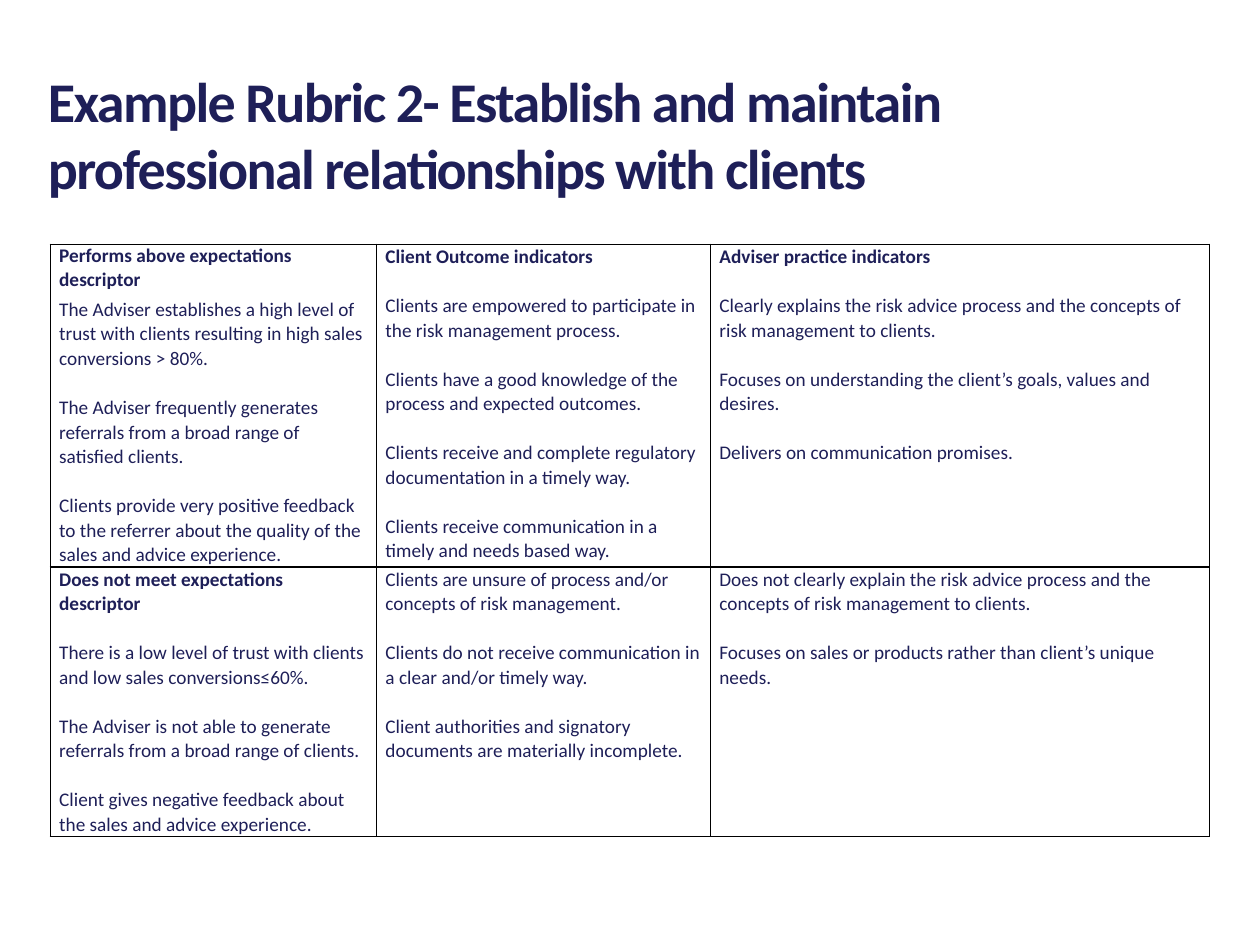
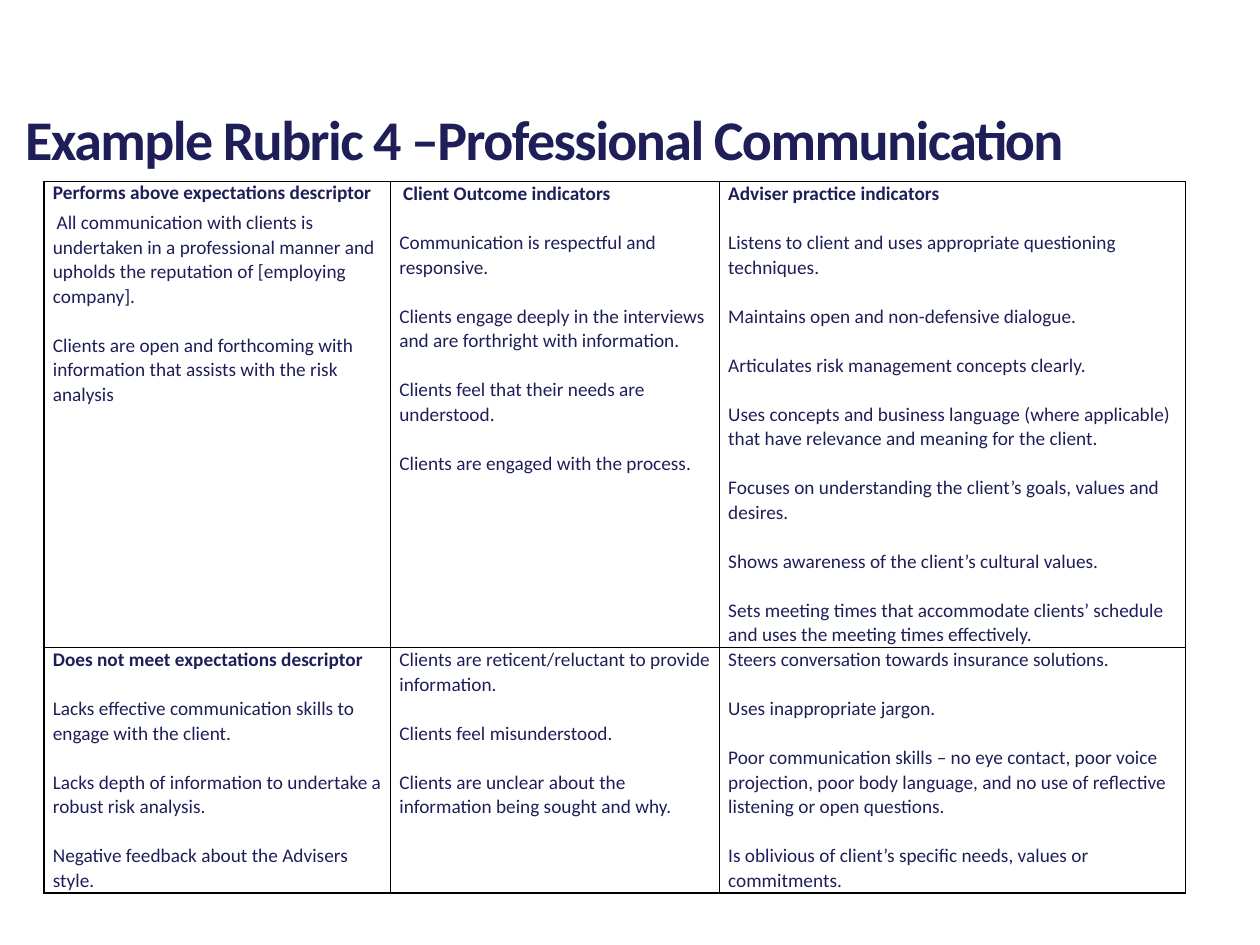
"""Build two slides that each show a rubric table."""
from dataclasses import dataclass

from lxml.etree import SubElement as Sub
from pptx import Presentation
from pptx.dml.color import RGBColor as Rgb
from pptx.enum.text import MSO_ANCHOR as Anchor, MSO_AUTO_SIZE as Auto, PP_ALIGN as Align
from pptx.oxml.ns import qn
from pptx.util import Inches, Pt

ABOVE = "Performs above expectations descriptor"
BELOW = "Does not meet expectations descriptor"
CLIENT = "Client Outcome indicators"
ADVISER = "Adviser practice indicators"

RUBRICS = [
    {
        "title": "Example Rubric 2- Establish and maintain professional relationships with clients",
        "head": (0.38, 0.72),
        "place": (0.4, 1.94),
        "cols": (2.59, 2.65, 3.96),
        "rows": (2.56, 2.14),
        "nudge": (),
        "cells": [
            [
                [
                    ABOVE,
                    "The Adviser establishes a high level of trust with clients resulting in high sales conversions > 80%.",
                    "The Adviser frequently generates referrals from a broad range of satisfied clients.",
                    "Clients provide very positive feedback to the referrer about the quality of the sales and advice experience.",
                ],
                [
                    CLIENT,
                    "Clients are empowered to participate in the risk management process.",
                    "Clients have a good knowledge of the process and expected outcomes.",
                    "Clients receive and complete regulatory documentation in a timely way.",
                    "Clients receive communication in a timely and needs based way.",
                ],
                [
                    ADVISER,
                    "Clearly explains the risk advice process and the concepts of risk management to clients.",
                    "Focuses on understanding the client’s goals, values and desires.",
                    "Delivers on communication promises.",
                ],
            ],
            [
                [
                    BELOW,
                    "There is a low level of trust with clients and low sales conversions≤60%.",
                    "The Adviser is not able to generate referrals from a broad range of clients.",
                    "Client gives negative feedback about the sales and advice experience.",
                ],
                [
                    "Clients are unsure of process and/or concepts of risk management.",
                    "Clients do not receive communication in a clear and/or timely way.",
                    "Client authorities and signatory documents are materially incomplete.",
                ],
                [
                    "Does not clearly explain the risk advice process and the concepts of risk management to clients.",
                    "Focuses on sales or products rather than client’s unique needs.",
                ],
            ],
        ],
    },
    {
        "title": "Example Rubric 4 –Professional Communication",
        "head": (0.2, 0.76),
        "place": (0.35, 1.44),
        "cols": (2.75, 2.61, 3.7),
        "rows": (3.7, 1.94),
        "nudge": ((0, 0, 1), (0, 1, 0)),
        "cells": [
            [
                [
                    ABOVE,
                    "All communication with clients is undertaken in a professional manner and upholds the reputation of [employing company].",
                    "Clients are open and forthcoming with information that assists with the risk analysis",
                ],
                [
                    CLIENT,
                    "Communication is respectful and responsive.",
                    "Clients engage deeply in the interviews and are forthright with information.",
                    "Clients feel that their needs are understood.",
                    "Clients are engaged with the process.",
                ],
                [
                    ADVISER,
                    "Listens to client and uses appropriate questioning techniques.",
                    "Maintains open and non-defensive dialogue.",
                    "Articulates risk management concepts clearly.",
                    "Uses concepts and business language (where applicable) that have relevance and meaning for the client.",
                    "Focuses on understanding the client’s goals, values and desires.",
                    "Shows awareness of the client’s cultural values.",
                    "Sets meeting times that accommodate clients’ schedule and uses the meeting times effectively.",
                ],
            ],
            [
                [
                    BELOW,
                    "Lacks effective communication skills to engage with the client.",
                    "Lacks depth of information to undertake a robust risk analysis.",
                    "Negative feedback about the Advisers style.",
                ],
                [
                    "Clients are reticent/reluctant to provide information.",
                    "Clients feel misunderstood.",
                    "Clients are unclear about the information being sought and why.",
                ],
                [
                    "Steers conversation towards insurance solutions.",
                    "Uses inappropriate jargon.",
                    "Poor communication skills – no eye contact, poor voice projection, poor body language, and no use of reflective listening or open questions.",
                    "Is oblivious of client’s specific needs, values or commitments.",
                ],
            ],
        ],
    },
]


@dataclass(frozen=True)
class Theme:
    """Hold the shared colours, sizes and spacing."""
    ink: Rgb = Rgb.from_string("1E1F58")
    rule: str = "000000"
    face: str = "Calibri"
    title: Pt = Pt(32)
    body: Pt = Pt(11)
    line: Pt = Pt(14)
    before: Pt = Pt(3)
    after: Pt = Pt(11)
    edge: Pt = Pt(1)
    inset: Inches = Inches(0.07)
    nudge: Inches = Inches(0.03)


THEME = Theme()


def style(para, size, bold):
    """Set the font of a paragraph."""
    font = para.font
    font.name, font.size, font.bold = THEME.face, size, bold
    font.color.rgb = THEME.ink


def add_title(slide, text, spot):
    """Place and format the slide title."""
    box = slide.shapes.title
    box.left, box.top = map(Inches, spot)
    box.width, box.height = Inches(9.21), Inches(0.68)
    frame = box.text_frame
    frame.text = text
    frame.word_wrap, frame.auto_size = True, Auto.NONE
    frame.vertical_anchor = Anchor.MIDDLE
    frame.margin_left = frame.margin_right = frame.margin_top = frame.margin_bottom = 0
    para = frame.paragraphs[0]
    para.alignment = Align.LEFT
    style(para, THEME.title, True)
    para.runs[0].font._element.set("spc", "-90")


def frame_cell(cell):
    """Give a cell its borders, margins and empty fill."""
    props = cell._tc.get_or_add_tcPr()
    for side in ("lnL", "lnR", "lnT", "lnB"):
        edge = Sub(props, qn(f"a:{side}"), w=str(THEME.edge))
        Sub(Sub(edge, qn("a:solidFill")), qn("a:srgbClr"), val=THEME.rule)
    cell.fill.background()
    cell.margin_left = cell.margin_right = THEME.inset
    cell.margin_top = cell.margin_bottom = 0


def fill_cell(cell, texts, row, col, nudges):
    """Write the paragraphs of a cell."""
    frame = cell.text_frame
    for pos, text in enumerate(texts):
        para = frame.add_paragraph() if pos else frame.paragraphs[0]
        para.text = text
        if (row, col, pos) in nudges:
            para._p.get_or_add_pPr().set("indent", str(THEME.nudge))
        if (row, col, pos) != (0, 0, 0):
            para.line_spacing, para.space_after = THEME.line, THEME.after
        if pos:
            para.space_before = THEME.before
        style(para, THEME.body, pos == 0 and (row == 0 or col == 0))


def add_grid(slide, rubric):
    """Add the rubric table."""
    cols, rows = rubric["cols"], rubric["rows"]
    size = map(Inches, (*rubric["place"], sum(cols), sum(rows)))
    table = slide.shapes.add_table(len(rows), len(cols), *size).table
    table.first_row = table.horz_banding = False
    for part, width in zip(table.columns, cols):
        part.width = Inches(width)
    for part, height in zip(table.rows, rows):
        part.height = Inches(height)
    for row, line in enumerate(rubric["cells"]):
        for col, texts in enumerate(line):
            cell = table.cell(row, col)
            frame_cell(cell)
            fill_cell(cell, texts, row, col, rubric["nudge"])


def main():
    """Build and save the slides."""
    deck = Presentation()
    deck.slide_width, deck.slide_height = Inches(10), Inches(7.5)
    for rubric in RUBRICS:
        slide = deck.slides.add_slide(deck.slide_layouts[5])
        add_title(slide, rubric["title"], rubric["head"])
        add_grid(slide, rubric)
    deck.save("out.pptx")


if __name__ == "__main__":
    main()
